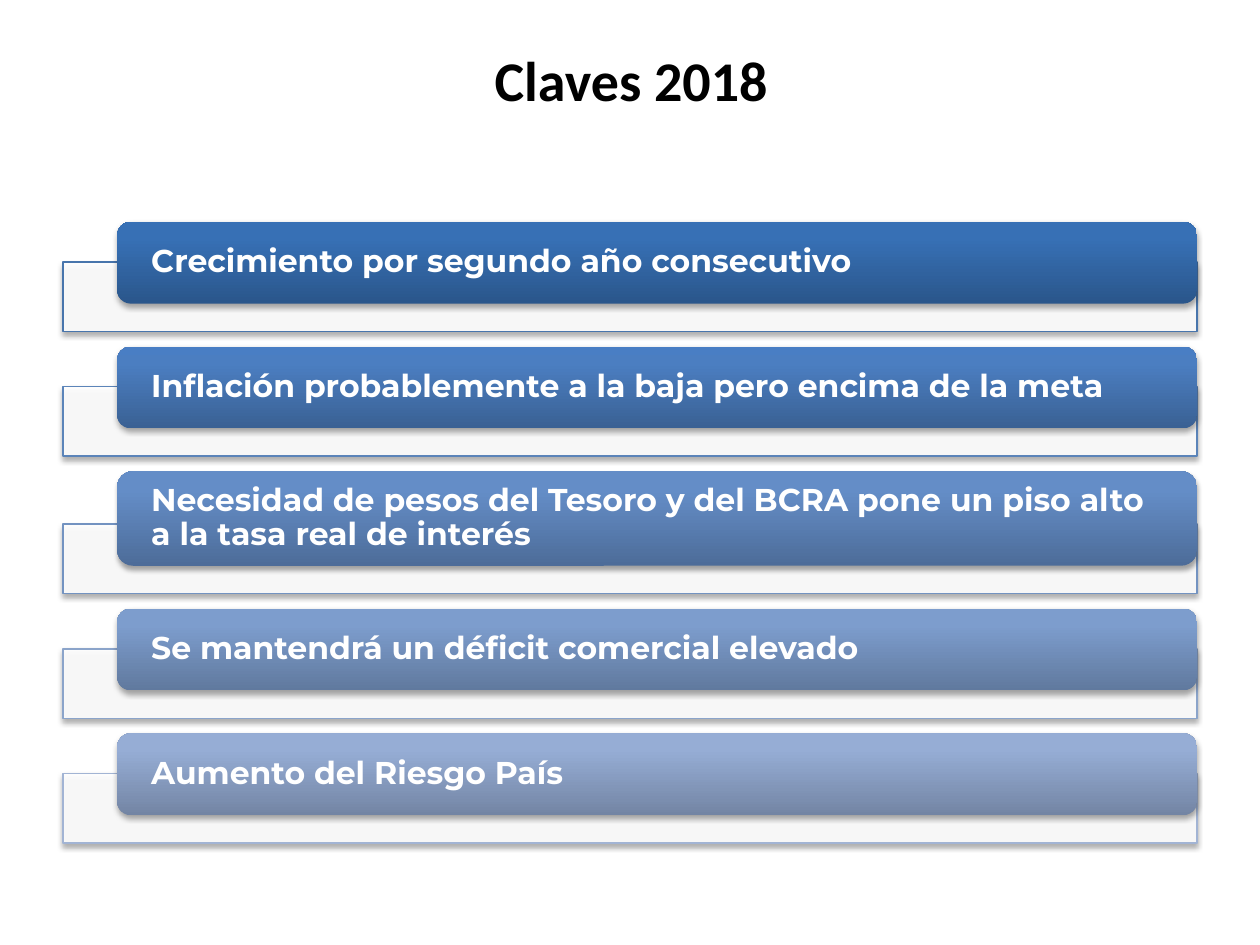
from copy import deepcopy
from dataclasses import dataclass

from lxml.etree import SubElement as Sub
from pptx import Presentation
from pptx.dml.color import RGBColor as Rgb
from pptx.enum.shapes import MSO_SHAPE as Kind
from pptx.enum.text import MSO_ANCHOR as Anchor, PP_ALIGN as Align
from pptx.oxml.ns import qn
from pptx.util import Inches, Pt


@dataclass(frozen=True)
class Theme:
    """Colours, fonts and type sizes of the slide."""
    black: str = "000000"
    white: str = "FFFFFF"
    head: str = "Calibri"
    body: str = "Montserrat"
    big: int = 32
    mid: int = 18


THEME = Theme()

KEYS = [
    ("Crecimiento por segundo año consecutivo", 0.65, "4875AC",
     ("2A568B", "3770B5", "3570B8")),
    ("Inflación probablemente a la baja pero encima de la meta", 0.65, "5B84B9",
     ("3A6194", "4B7EC1", "497EC4")),
    ("Necesidad de pesos del Tesoro y del BCRA pone un piso alto "
     "a la tasa real de interés", 0.75, "7393C1",
     ("4D6C99", "648DC7", "638DCA")),
    ("Se mantendrá un déficit comercial elevado", 0.65, "8BA4CA",
     ("60799E", "7D9DCD", "7C9DD0")),
    ("Aumento del Riesgo País", 0.65, "A2B4D4",
     ("7385A4", "96ADD5", "95ADD7")),
]


def box(x, y, w, h):
    """Turn four lengths in inches into slide units."""
    return [Inches(n) for n in (x, y, w, h)]


def write(frame, text, font, size, color, align=Align.LEFT, pad=0.1, line=1.0):
    """Fill a text frame with one bold, formatted paragraph."""
    frame.word_wrap = True
    frame.vertical_anchor = Anchor.MIDDLE
    frame.margin_left = frame.margin_right = Inches(pad)
    frame.margin_top = frame.margin_bottom = 0
    para = frame.paragraphs[0]
    para.alignment = align
    para.line_spacing = line
    run = para.add_run()
    run.text = text
    run.font.name = font
    run.font.size = Pt(size)
    run.font.bold = True
    run.font.color.rgb = Rgb.from_string(color)


def shade(shape):
    """Give a shape a soft shadow straight below it."""
    shape.shadow.inherit = False
    effect = shape._element.spPr.find(qn("a:effectLst"))
    outer = Sub(effect, qn("a:outerShdw"), blurRad=str(Pt(3.1)),
                dist=str(Pt(1.8)), dir="5400000", rotWithShape="0")
    tint = Sub(outer, qn("a:srgbClr"), val=THEME.black)
    Sub(tint, qn("a:alpha"), val="35000")


def blend(shape, tones):
    """Fill a shape with a three-stop gradient that rises from the bottom."""
    fill = shape.fill
    fill.gradient()
    fill.gradient_angle = 90
    stops = shape._element.spPr.find(".//" + qn("a:gsLst"))
    stops.append(deepcopy(stops[-1]))
    for stop, place, tone in zip(fill.gradient_stops, (0, 0.8, 1), tones):
        stop.position = place
        stop.color.rgb = Rgb.from_string(tone)


def add_tray(shapes, x, y, w, h, edge):
    """Draw the outlined tray behind a bar."""
    tray = shapes.add_shape(Kind.RECTANGLE, *box(x, y, w, h))
    tray.fill.solid()
    tray.fill.fore_color.rgb = Rgb.from_string(THEME.white)
    tint = tray._element.spPr.find(".//" + qn("a:srgbClr"))
    Sub(tint, qn("a:alpha"), val="90000")
    tray.line.color.rgb = Rgb.from_string(edge)
    tray.line.width = Pt(0.75)
    shade(tray)


def add_bar(shapes, x, y, w, h, text, tones):
    """Draw a rounded bar with its label inset."""
    bar = shapes.add_shape(Kind.ROUNDED_RECTANGLE, *box(x, y, w, h))
    blend(bar, tones)
    bar.line.fill.background()
    shade(bar)
    edge = 0.03
    label = shapes.add_textbox(*box(x + edge, y + edge, w - 2 * edge, h - 2 * edge))
    write(label.text_frame, text, THEME.body, THEME.mid, THEME.white,
          pad=0.24, line=0.9)


def add_list(slide, x, y, w):
    """Stack the keys downwards, each bar overlapping its tray."""
    shapes = slide.shapes.add_group_shape().shapes
    inset, lap, tray, gap = 0.43, 0.33, 0.55, 0.12
    for text, high, edge, tones in KEYS:
        low = y + high - lap
        add_tray(shapes, x, low, w, tray, edge)
        add_bar(shapes, x + inset, y, w - inset, high, text, tones)
        y = low + tray + gap


def add_title(slide, x, y, w, h):
    """Place and format the title."""
    title = slide.shapes.title
    title.left, title.top, title.width, title.height = box(x, y, w, h)
    write(title.text_frame, "Claves 2018", THEME.head, THEME.big, THEME.black,
          align=Align.CENTER)


def main():
    """Build and save the slide."""
    deck = Presentation()
    deck.slide_width, deck.slide_height = Inches(10), Inches(7.5)
    slide = deck.slides.add_slide(deck.slide_layouts[5])
    add_title(slide, 0.51, 0, 9, 1.25)
    add_list(slide, 0.5, 1.76, 9)
    deck.save("out.pptx")


if __name__ == "__main__":
    main()
